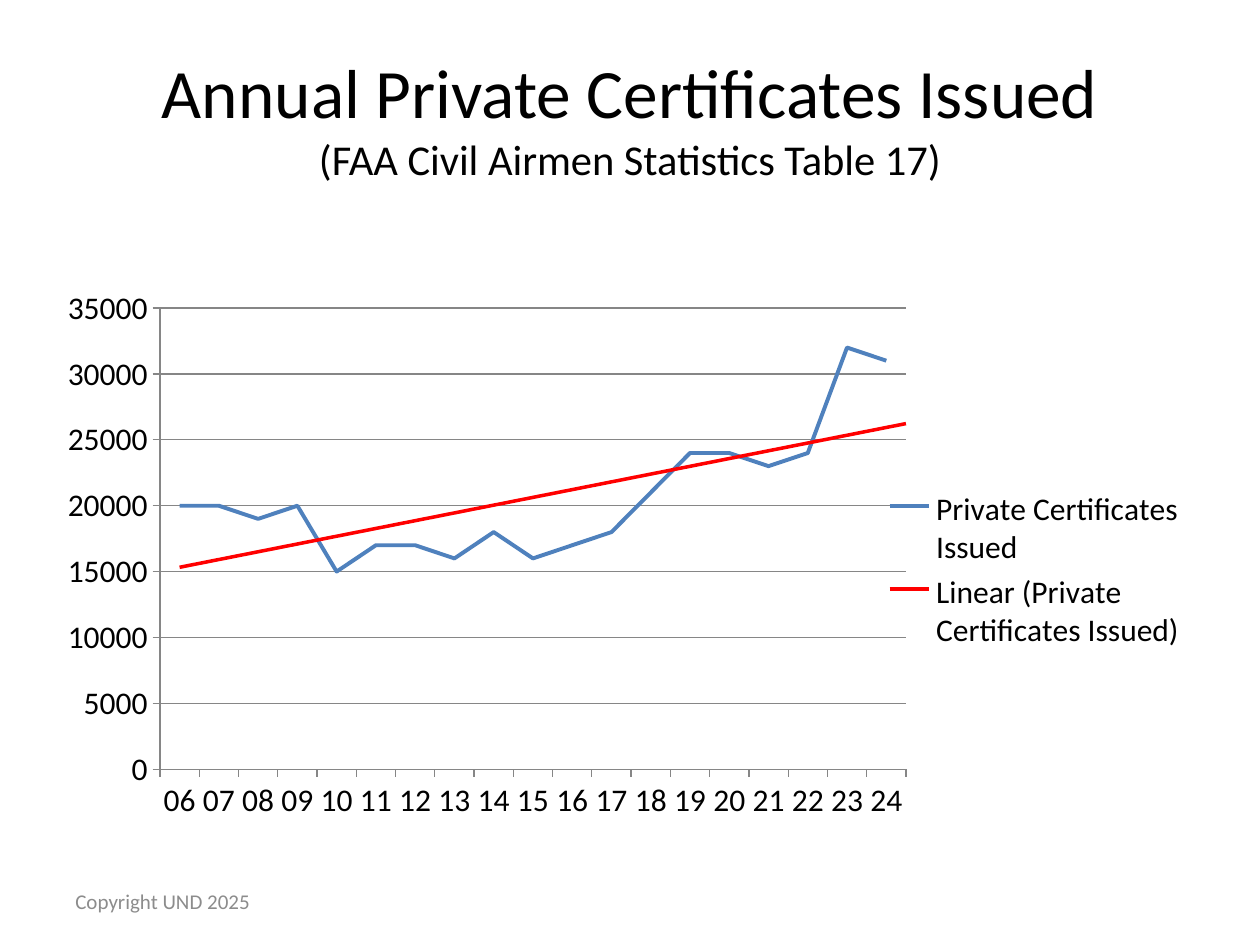
"""Build the slide on annual private certificates issued, with its line chart."""
from lxml import etree
from pptx import Presentation
from pptx.chart.data import CategoryChartData
from pptx.dml.color import RGBColor
from pptx.enum.chart import XL_CHART_TYPE, XL_LEGEND_POSITION, XL_MARKER_STYLE, XL_TICK_MARK
from pptx.enum.text import MSO_ANCHOR, PP_ALIGN
from pptx.oxml import parse_xml
from pptx.oxml.ns import nsdecls, qn
from pptx.util import Cm, Pt

LINE = XL_CHART_TYPE.LINE
RIGHT = XL_LEGEND_POSITION.RIGHT
NO_MARKER = XL_MARKER_STYLE.NONE
OUTSIDE = XL_TICK_MARK.OUTSIDE
MIDDLE = MSO_ANCHOR.MIDDLE
CENTER, LEFT = PP_ALIGN.CENTER, PP_ALIGN.LEFT

FONT = "Calibri"
BLACK = RGBColor(0x00, 0x00, 0x00)
GRAY = RGBColor(0x8C, 0x8C, 0x8C)
AXIS_GRAY = RGBColor(0x86, 0x86, 0x86)
BLUE = RGBColor(0x4F, 0x81, 0xBD)
RED = RGBColor(0xFF, 0x00, 0x00)


def add_text(left, top, width, height, align, color, runs):
    frame = slide.shapes.add_textbox(Cm(left), Cm(top), Cm(width), Cm(height)).text_frame
    frame.word_wrap = True
    frame.vertical_anchor = MIDDLE
    paragraph = frame.paragraphs[0]
    paragraph.alignment = align
    for index, (words, size) in enumerate(runs):
        if index:
            paragraph.add_line_break()
        run = paragraph.add_run()
        run.text = words
        run.font.name = FONT
        run.font.size = Pt(size)
        run.font.color.rgb = color


def place(element, position, target, box):
    for old in element.findall(qn("c:layout")):
        element.remove(old)
    layout = parse_xml(f"<c:layout {nsdecls('c')}><c:manualLayout/></c:layout>")
    settings = [("layoutTarget", target)] if target else []
    settings += [("xMode", "edge"), ("yMode", "edge"), *zip("xywh", box)]
    for tag, value in settings:
        etree.SubElement(layout[0], qn(f"c:{tag}")).set("val", str(value))
    element.insert(position, layout)


presentation = Presentation()
presentation.slide_width = Cm(25.4)
presentation.slide_height = Cm(19.05)
slide = presentation.slides.add_slide(presentation.slide_layouts[6])

add_text(1.27, 0.76, 22.86, 3.18, CENTER, BLACK, [
    ("Annual Private Certificates Issued", 39.6),
    ("(FAA Civil Airmen Statistics Table 17)", 24.3),
])
add_text(1.27, 17.65, 5.92, 1.02, LEFT, GRAY, [("Copyright UND 2025", 12)])

certificates = CategoryChartData()
certificates.categories = [f"{year:02d}" for year in range(6, 25)]
certificates.add_series("Private Certificates Issued", [
    20000, 20000, 19000, 20000, 15000, 17000, 17000, 16000, 18000, 16000,
    17000, 18000, 21000, 24000, 24000, 23000, 24000, 32000, 31000,
])
chart = slide.shapes.add_chart(
    LINE, Cm(0.64), Cm(4.45), Cm(23.5), Cm(12.57), certificates).chart
chart.has_title = False
chart.font.name = FONT
chart.font.size = Pt(18)
chart.font.color.rgb = BLACK

years, counts = chart.category_axis, chart.value_axis
counts.minimum_scale, counts.maximum_scale, counts.major_unit = 0, 35000, 5000
counts.has_major_gridlines = True
years.has_major_gridlines = False
for axis in (years, counts):
    axis.major_tick_mark = OUTSIDE
for ruled in (years, counts, counts.major_gridlines):
    ruled.format.line.color.rgb = AXIS_GRAY
    ruled.format.line.width = Pt(0.75)

chart.plots[0].vary_by_categories = False
issued = chart.plots[0].series[0]
issued.smooth = False
issued.marker.style = NO_MARKER
issued.format.line.color.rgb = BLUE
issued.format.line.width = Pt(2.25)
trend = parse_xml(
    f"<c:trendline {nsdecls('c', 'a')}>"
    f'<c:spPr><a:ln w="{Pt(2)}"><a:solidFill><a:srgbClr val="{RED}"/></a:solidFill></a:ln></c:spPr>'
    '<c:trendlineType val="linear"/><c:forward val="0.5"/>'
    '<c:dispRSqr val="0"/><c:dispEq val="0"/></c:trendline>')
issued._element.find(qn("c:cat")).addprevious(trend)

chart.has_legend = True
chart.legend.position = RIGHT
chart.legend.include_in_layout = False
place(chart.legend._element, 1, None, (0.73, 0.42, 0.26, 0.28))
place(counts._element.getparent(), 0, "inner", (0.11, 0.14, 0.64, 0.74))

presentation.save("out.pptx")
